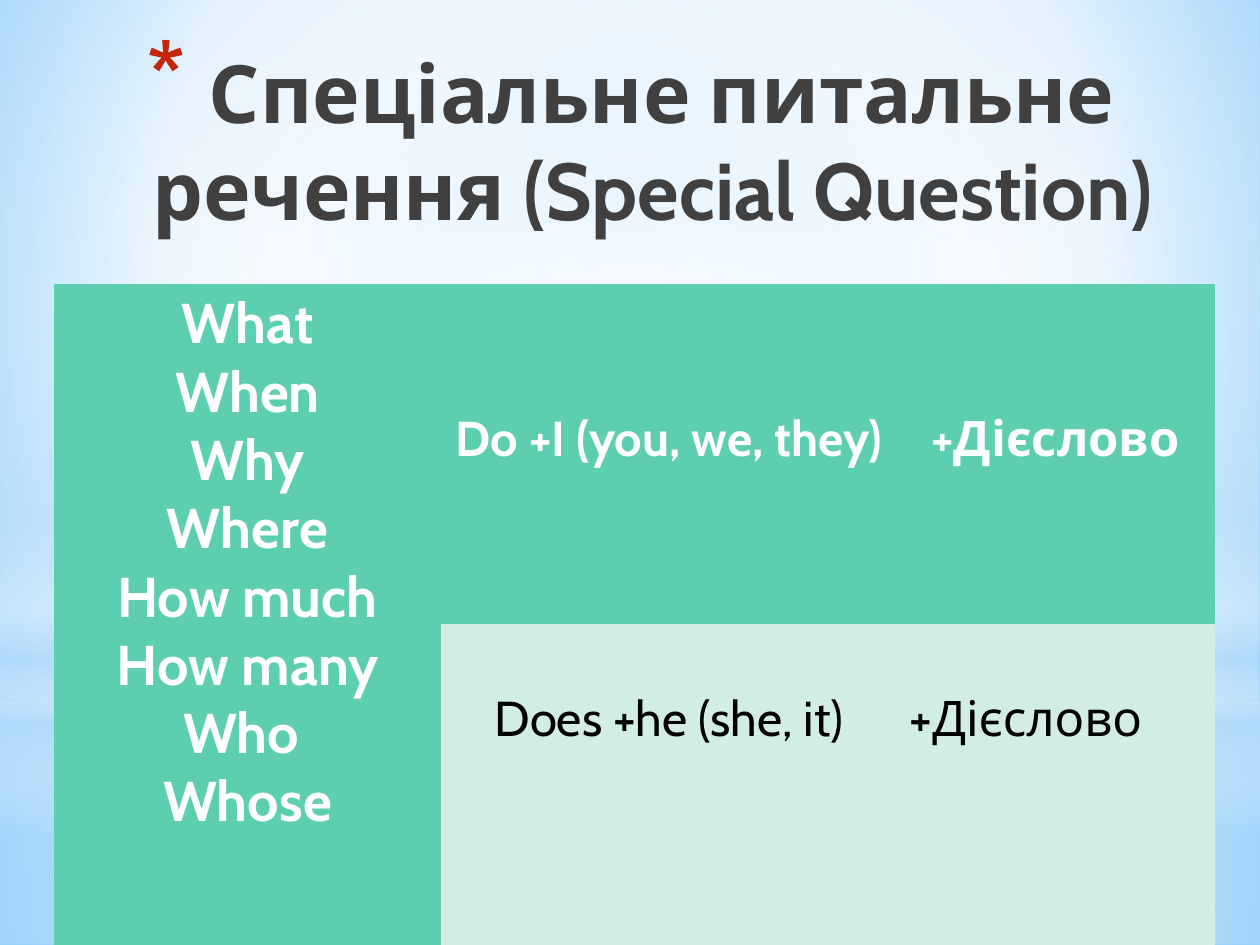
from lxml import etree
from pptx import Presentation
from pptx.dml.color import RGBColor
from pptx.enum import shapes, text
from pptx.oxml import ns
from pptx.util import Inches, Pt

FONT = "Cabin"
COLORS = {"title": "404040", "bullet": "C3260C", "green": "5DCEAF", "mint": "D2EDE3",
          "white": "FFFFFF", "black": "000000", "pale": "B4DCFA", "sky": "9ED5FF", "blue": "5BB9FF"}
TITLE = " Спеціальне питальне речення (Special Question)"
QUESTION_WORDS = ["What", "When", "Why", "Where", "How much", "How many", "Who ", "Whose"]
CENTER, LEFT = text.PP_ALIGN.CENTER, text.PP_ALIGN.LEFT
MIDDLE = (50, 50, 50, 50)

BACKDROP_STOPS = [(0, "sky", 100), (60, "white", 100), (100, "blue", 100)]
GLOWS = [
    ("RECTANGLE", (0, 5.58, 10, 1.92), [(0, "white", 91), (37, "white", 76), (100, "pale", 79)], MIDDLE),
    ("RECTANGLE", (0, 0, 10, 5.58), [(0, "white", 89), (48, "white", 62), (100, "pale", 79)], MIDDLE),
    ("RECTANGLE", (0, 4.12, 10, 2.5), [(0, "white", 0), (29, "white", 30), (45, "pale", 40),
                                       (55, "white", 26), (65, "pale", 60), (100, "white", 0)], None),
    ("OVAL", (0, 1.75, 10, 5.58), [(0, "white", 100), (56, "white", 0)], MIDDLE),
]
COLUMNS = [3.07, 3.62, 2.52]
ROWS = [2.7, 2.55]
CELLS = [
    (0, 0, QUESTION_WORDS, 32, CENTER, 0.05),
    (0, 1, ["Do +I (you, we, they)"], 28, CENTER, 1),
    (0, 2, ["+Дієслово"], 28, CENTER, 1),
    (1, 1, ["Does +he (she, it)"], 28, CENTER, 0.52),
    (1, 2, ["+Дієслово"], 28, LEFT, 0.52),
]


def set_gradient(properties, stops, focus):
    """Replace the solid fill with a circular gradient, or a vertical one without a focus."""
    gradient = etree.Element(ns.qn("a:gradFill"), rotWithShape="1")
    stop_list = etree.SubElement(gradient, ns.qn("a:gsLst"))
    for position, color, opacity in stops:
        stop = etree.SubElement(stop_list, ns.qn("a:gs"), pos=str(position * 1000))
        value = etree.SubElement(stop, ns.qn("a:srgbClr"), val=COLORS[color])
        etree.SubElement(value, ns.qn("a:alpha"), val=str(opacity * 1000))
    if focus:
        circle = etree.SubElement(gradient, ns.qn("a:path"), path="circle")
        sides = {side: str(share * 1000) for side, share in zip("ltrb", focus)}
        etree.SubElement(circle, ns.qn("a:fillToRect"), sides)
    else:
        etree.SubElement(gradient, ns.qn("a:lin"), ang="5400000", scaled="0")
    properties.replace(properties.find(ns.qn("a:solidFill")), gradient)


def style_paragraph(paragraph, size, color, bold, alignment):
    """Set the font and alignment of a paragraph."""
    font = paragraph.font
    font.name, font.size, font.bold = FONT, Pt(size), bold
    font.color.rgb = RGBColor.from_string(COLORS[color])
    paragraph.alignment = alignment


def add_backdrop(slide):
    """Draw the background gradient and the soft glows."""
    slide.background.fill.solid()
    set_gradient(slide.element.find(".//" + ns.qn("p:bgPr")), BACKDROP_STOPS, (20, 10, 20, 60))
    for kind, box, stops, focus in GLOWS:
        glow = slide.shapes.add_shape(shapes.MSO_SHAPE[kind], *map(Inches, box))
        glow.shadow.inherit = False
        glow.line.fill.background()
        glow.fill.solid()
        set_gradient(glow.element.spPr, stops, focus)


def add_title(slide):
    """Fill the title placeholder and bring it in front of the glows."""
    title = slide.shapes.title
    title.left, title.top, title.width, title.height = map(Inches, (0.28, 0.29, 9.45, 1.25))
    frame = title.text_frame
    frame.text = TITLE
    frame.word_wrap = True
    frame.auto_size = text.MSO_AUTO_SIZE.NONE
    frame.vertical_anchor = text.MSO_ANCHOR.TOP
    paragraph = frame.paragraphs[0]
    style_paragraph(paragraph, 46, "title", True, CENTER)
    properties = paragraph._p.get_or_add_pPr()
    properties.set("marL", str(Inches(0.35)))
    properties.set("indent", str(Inches(-0.35)))
    bullet_color = etree.Element(ns.qn("a:buClr"))
    etree.SubElement(bullet_color, ns.qn("a:srgbClr"), val=COLORS["bullet"])
    bullet_size = etree.Element(ns.qn("a:buSzPct"), val="128000")
    bullet = etree.Element(ns.qn("a:buChar"), char="*")
    for element in (bullet_color, bullet_size, bullet):
        properties.find(ns.qn("a:defRPr")).addprevious(element)
    slide.shapes.element.append(title.element)


def add_question_table(slide):
    """Add the table of question words and sentence patterns."""
    frame = slide.shapes.add_table(len(ROWS), len(COLUMNS), Inches(0.43), Inches(2.25),
                                   Inches(sum(COLUMNS)), Inches(sum(ROWS)))
    table = frame.table
    table.horz_banding = False
    style = frame.element.find(".//" + ns.qn("a:tableStyleId"))
    style.text = "{2D5ABB26-0587-4C30-8999-92F81FD0307C}"
    for column, width in zip(table.columns, COLUMNS):
        column.width = Inches(width)
    for row, height in zip(table.rows, ROWS):
        row.height = Inches(height)
    table.cell(0, 0).merge(table.cell(1, 0))
    for row, column, lines, size, alignment, top in CELLS:
        cell = table.cell(row, column)
        heading = row == 0
        cell.fill.solid()
        cell.fill.fore_color.rgb = RGBColor.from_string(COLORS["green" if heading else "mint"])
        cell.margin_top = Inches(top)
        cell.text_frame.text = "\n".join(lines)
        for paragraph in cell.text_frame.paragraphs:
            style_paragraph(paragraph, size, "white" if heading else "black", heading, alignment)


def main():
    """Build the slide on special questions."""
    presentation = Presentation()
    presentation.slide_width, presentation.slide_height = Inches(10), Inches(7.5)
    slide = presentation.slides.add_slide(presentation.slide_layouts[5])
    add_backdrop(slide)
    add_title(slide)
    add_question_table(slide)
    presentation.save("out.pptx")


if __name__ == "__main__":
    main()
